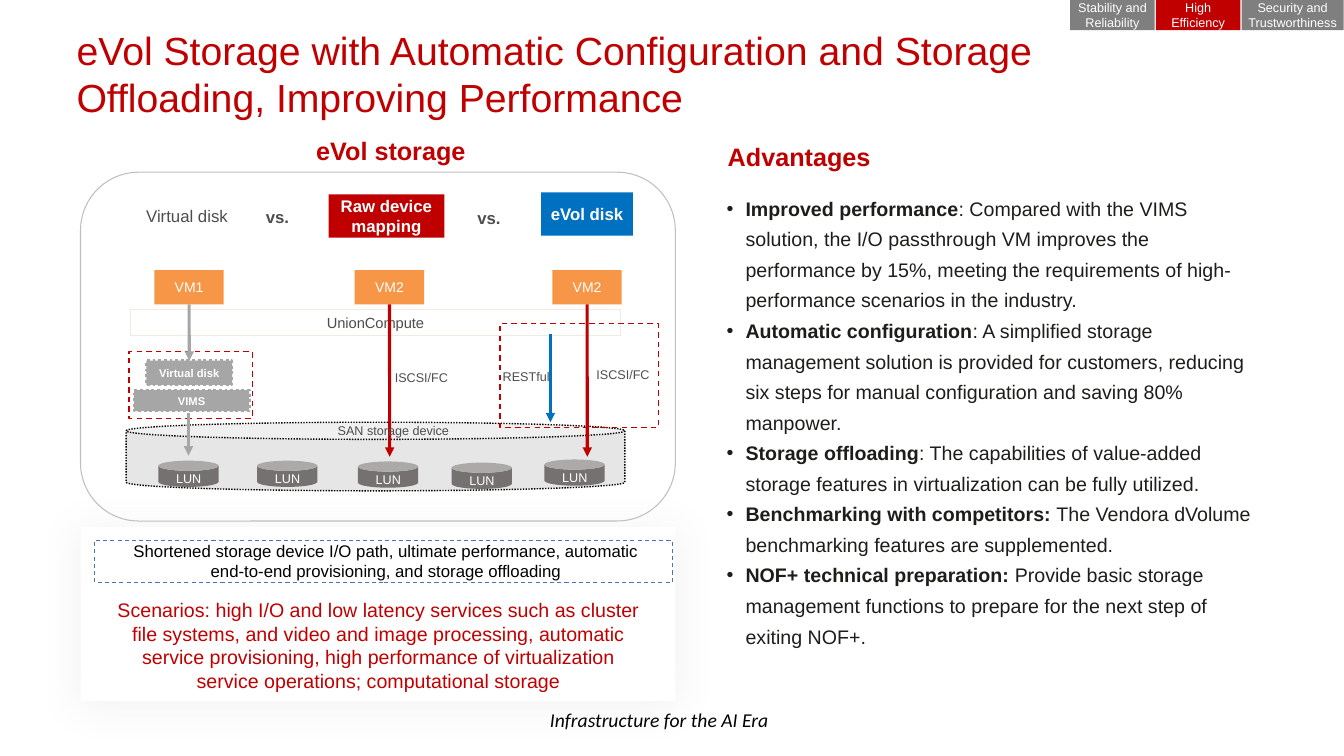
from lxml import etree
from pptx import Presentation
from pptx.dml.color import RGBColor
from pptx.enum.dml import MSO_LINE
from pptx.enum.shapes import MSO_CONNECTOR, MSO_SHAPE
from pptx.enum.text import MSO_ANCHOR, PP_ALIGN
from pptx.oxml.ns import qn
from pptx.util import Cm, Pt

RECT, ROUND, CAN = MSO_SHAPE.RECTANGLE, MSO_SHAPE.ROUNDED_RECTANGLE, MSO_SHAPE.CAN
DASH, DOT = MSO_LINE.DASH, MSO_LINE.ROUND_DOT
LEFT, CENTER = PP_ALIGN.LEFT, PP_ALIGN.CENTER
TOP, MIDDLE = MSO_ANCHOR.TOP, MSO_ANCHOR.MIDDLE
STRAIGHT = MSO_CONNECTOR.STRAIGHT


class Theme:
    font, footer_font = "Arial", "Calibri"
    red, blue, orange = "C00000", "0070C0", "F79646"
    white, black, ink, grey_text = "FFFFFF", "000000", "1D1D1A", "4D4D4D"
    grey, lun, san, border = "A6A6A6", "767171", "E7E6E6", "BFBFBF"
    cream, dash_blue, tab = "EEECE1", "4472C4", "7F7F7F"
    title, heading, body, note = 28, 18, 14, 12
    platform, vm, label, small = 10.5, 10, 9, 8


prs = Presentation()
prs.slide_width, prs.slide_height = Cm(33.87), Cm(19.05)
s = prs.slides.add_slide(prs.slide_layouts[6])


def add_box(kind, x, y, w, h, fill=None, line=None, width=1, dash=None):
    pos = Cm(x), Cm(y), Cm(w), Cm(h)
    if kind is None:
        return s.shapes.add_textbox(*pos)
    sp = s.shapes.add_shape(kind, *pos)
    sp.shadow.inherit = False
    if fill:
        sp.fill.solid()
        sp.fill.fore_color.rgb = RGBColor.from_string(fill)
    else:
        sp.fill.background()
    if line:
        sp.line.color.rgb = RGBColor.from_string(line)
        sp.line.width = Pt(width)
        if dash:
            sp.line.dash_style = dash
    else:
        sp.line.fill.background()
    return sp


def write(sp, text, size, color, bold=False, align=LEFT, anchor=TOP, inset=(0.25, 0.13)):
    tf = sp.text_frame
    tf.word_wrap = True
    tf.vertical_anchor = anchor
    tf.margin_left = tf.margin_right = Cm(inset[0])
    tf.margin_top = tf.margin_bottom = Cm(inset[1])
    p = tf.paragraphs[0]
    p.alignment = align
    r = p.add_run()
    r.text = text
    r.font.name, r.font.size, r.font.bold = Theme.font, Pt(size), bold
    r.font.color.rgb = RGBColor.from_string(color)
    return p


footer = add_box(None, 13.61, 17.7, 6.07, 0.86)
p = write(footer, "Infrastructure for the AI Era", Theme.body, Theme.black)
footer.text_frame.word_wrap = False
p.runs[0].font.name, p.runs[0].font.italic = Theme.footer_font, True

panel = add_box(RECT, 2.03, 13.28, 14.99, 4.39, Theme.white)
effects = panel._element.spPr.find(qn("a:effectLst"))
shadow = etree.SubElement(effects, qn("a:outerShdw"), blurRad=str(Pt(29)),
                          dist=str(Pt(3)), dir="5400000", algn="t", rotWithShape="0")
tint = etree.SubElement(shadow, qn("a:srgbClr"), val="808080")
etree.SubElement(tint, qn("a:alpha"), val="11000")

write(add_box(None, 1.6, 0.48, 24.84, 2.03),
      "eVol Storage with Automatic Configuration and Storage Offloading, Improving Performance",
      Theme.title, Theme.red, inset=(0.33, 0.18))
write(add_box(None, 2.57, 14.94, 13.94, 1.75),
      "Scenarios: high I/O and low latency services such as cluster file systems, and video and "
      "image processing, automatic service provisioning, high performance of virtualization "
      "service operations; computational storage",
      Theme.body, Theme.red, align=CENTER)
p = write(add_box(None, 7.72, 2.84, 7.19, 1.32), "eVol storage", Theme.heading, Theme.red, True)
p.line_spacing = Pt(34.4)

add_box(CAN, 3.18, 10.64, 12.57, 1.73, Theme.san, Theme.black, 1, DOT)
write(add_box(RECT, 3.28, 7.8, 12.37, 0.66, Theme.white, Theme.cream, 0.75),
      "UnionCompute", Theme.platform, Theme.grey_text, align=CENTER, anchor=MIDDLE,
      inset=(0.3, 0.15))

for x, y in [(3.99, 11.61), (6.48, 11.61), (9.02, 11.63), (11.38, 11.66), (13.72, 11.58)]:
    lun = add_box(CAN, x, y, 1.52, 0.66, Theme.lun)
    lun.adjustments[0] = 0.387
    write(add_box(None, x + 0.2, y + 0.13, 1.55, 0.61), "LUN", Theme.label, Theme.white)

vms = []
for x, name in [(3.89, "VM1"), (8.94, "VM2"), (13.92, "VM2")]:
    vm = add_box(RECT, x, 6.81, 1.75, 0.86, Theme.orange)
    write(vm, name, Theme.vm, Theme.white, align=CENTER, anchor=MIDDLE, inset=(0.05, 0.05))
    vms.append(vm)

add_box(RECT, 3.25, 8.86, 3.12, 1.68, None, Theme.red, 1, DASH)
layers = []
for x, y, w, h, name in [(3.69, 9.09, 2.16, 0.61, "Virtual disk"), (3.38, 9.83, 2.9, 0.53, "VIMS")]:
    layer = add_box(RECT, x, y, w, h, Theme.grey, Theme.white, 2, DOT)
    layer.line.color.rgb = RGBColor.from_string(Theme.grey)
    write(layer, name, Theme.small, Theme.white, True, CENTER, MIDDLE)
    layers.append(layer)

for x, y1, y2, color, start, end in [
    (4.77, 7.67, 9.09, Theme.grey, vms[0], layers[0]),
    (4.75, 10.41, 11.48, Theme.grey, None, None),
    (9.82, 7.67, 11.51, Theme.red, vms[1], None),
    (14.8, 7.67, 11.51, Theme.red, vms[2], None),
    (13.87, 8.41, 10.64, Theme.blue, None, None),
]:
    arrow = s.shapes.add_connector(STRAIGHT, Cm(x), Cm(y1), Cm(x), Cm(y2))
    if start:
        arrow.begin_connect(start, 2)
    if end:
        arrow.end_connect(end, 0)
    arrow.line.color.rgb = RGBColor.from_string(color)
    arrow.line.width = Pt(2.25)
    etree.SubElement(arrow.line._get_or_add_ln(), qn("a:tailEnd"), type="triangle")
    etree.SubElement(arrow._element.spPr, qn("a:effectLst"))

for x, y, w, name in [
    (9.7, 9.19, 3.1, "ISCSI/FC"),
    (8.26, 10.52, 3.71, "SAN storage device"),
    (14.78, 9.12, 2.34, "ISCSI/FC"),
    (12.42, 9.17, 2.34, "RESTful"),
]:
    write(add_box(None, x, y, w, 0.64), name, Theme.label, Theme.grey_text)

for x, y in [(6.07, 5.08), (11.4, 5.11)]:
    write(add_box(None, x, y, 1.85, 0.69), "vs.", Theme.note, Theme.grey_text, True, CENTER)

for x, y, w, name, fill, color, bold in [
    (3.61, 4.9, 2.21, "Virtual disk", Theme.white, Theme.grey_text, False),
    (8.28, 4.9, 2.92, "Raw device mapping", Theme.red, Theme.white, True),
    (13.64, 4.85, 2.31, "eVol disk", Theme.blue, Theme.white, True),
]:
    write(add_box(RECT, x, y, w, 1.09, fill), name, Theme.note, color, bold, CENTER, MIDDLE,
          (0.05, 0.05))

add_box(ROUND, 2.03, 4.34, 14.99, 8.79, None, Theme.border, 0.75)
add_box(RECT, 12.6, 8.15, 3.99, 2.62, None, Theme.red, 1, DASH)
write(add_box(None, 2.87, 13.49, 13.72, 0.76),
      "Shortened storage device I/O path, ultimate performance, automatic end-to-end "
      "provisioning, and storage offloading",
      Theme.note, Theme.black, align=CENTER)
add_box(RECT, 2.39, 13.61, 14.55, 1.07, None, Theme.dash_blue, 0.75, DASH)

write(add_box(None, 18.34, 3.56, 3.86, 1.42), "Advantages", Theme.heading, Theme.red, True,
      inset=(0, 0))
tf = add_box(None, 18.31, 4.78, 13.39, 8).text_frame
tf.word_wrap = True
tf.margin_left = tf.margin_right = tf.margin_top = tf.margin_bottom = 0
advantages = [
    ("Improved performance",
     ": Compared with the VIMS solution, the I/O passthrough VM improves the performance by 15%, "
     "meeting the requirements of high-performance scenarios in the industry."),
    ("Automatic configuration",
     ": A simplified storage management solution is provided for customers, reducing six steps "
     "for manual configuration and saving 80% manpower."),
    ("Storage offloading",
     ": The capabilities of value-added storage features in virtualization can be fully utilized."),
    ("Benchmarking with competitors:",
     " The Vendora dVolume benchmarking features are supplemented."),
    ("NOF+ technical preparation:",
     " Provide basic storage management functions to prepare for the next step of exiting NOF+."),
]
for i, parts in enumerate(advantages):
    p = tf.add_paragraph() if i else tf.paragraphs[0]
    pPr = p._p.get_or_add_pPr()
    pPr.set("marL", str(Cm(0.48)))
    pPr.set("indent", str(-Cm(0.48)))
    etree.SubElement(pPr, qn("a:buFont"), typeface=Theme.font)
    etree.SubElement(pPr, qn("a:buChar"), char="•")
    p.line_spacing = 1.3
    for text, bold in zip(parts, (True, False)):
        r = p.add_run()
        r.text = text
        r.font.name, r.font.size, r.font.bold = Theme.font, Pt(Theme.body), bold
        r.font.color.rgb = RGBColor.from_string(Theme.ink)

for x, w, name, fill in [
    (26.97, 2.13, "Stability and Reliability", Theme.tab),
    (29.13, 2.13, "High Efficiency", Theme.red),
    (31.29, 2.57, "Security and Trustworthiness", Theme.tab),
]:
    write(add_box(RECT, x, 0, w, 0.76, fill), name, Theme.label, Theme.white, False, CENTER, MIDDLE,
          (0.05, 0.05))

prs.save("out.pptx")
